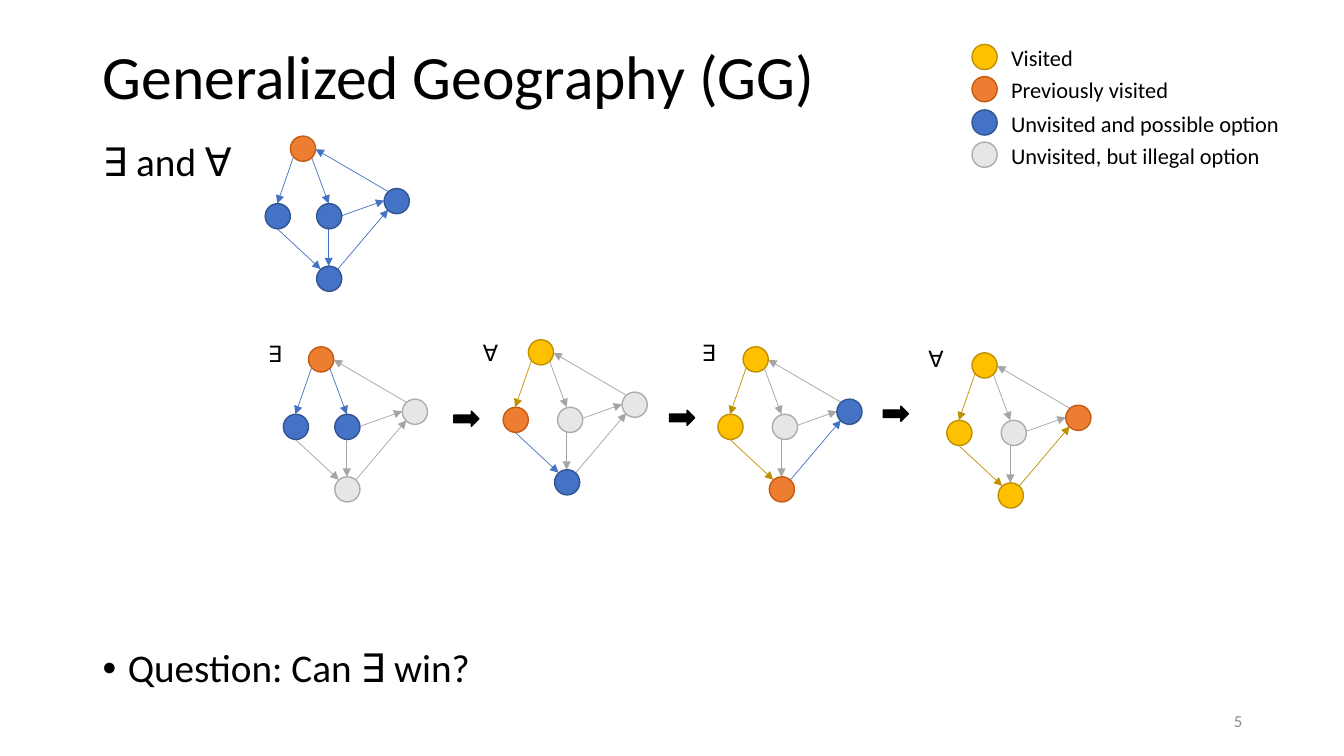
from lxml.etree import SubElement
from pptx import Presentation
from pptx.dml.color import RGBColor
from pptx.enum.shapes import MSO_CONNECTOR, MSO_SHAPE
from pptx.enum.text import MSO_ANCHOR, PP_ALIGN
from pptx.oxml.ns import qn
from pptx.util import Pt

PX = 9144  # 100 px to the inch
BLACK = RGBColor(0x00, 0x00, 0x00)
PAGE_GREY = RGBColor(0x8C, 0x8C, 0x8C)
BLUE = RGBColor(0x44, 0x72, 0xC4)
DARK_BLUE = RGBColor(0x32, 0x54, 0x91)
GOLD = RGBColor(0xFF, 0xC0, 0x00)
DARK_GOLD = RGBColor(0xBF, 0x90, 0x00)
ORANGE = RGBColor(0xED, 0x7D, 0x31)
DARK_ORANGE = RGBColor(0xC5, 0x5A, 0x11)
LIGHT_GREY = RGBColor(0xE7, 0xE6, 0xE6)
DARK_GREY = RGBColor(0xAF, 0xAB, 0xAB)
EDGE_GREY = RGBColor(0xA5, 0xA5, 0xA5)

NODE_SIZE = 25
VISITED = (GOLD, DARK_GOLD)
PREVIOUS = (ORANGE, DARK_ORANGE)
OPTION = (BLUE, DARK_BLUE)
ILLEGAL = (LIGHT_GREY, DARK_GREY)

presentation = Presentation()
presentation.slide_width = 1333 * PX
presentation.slide_height = 750 * PX
slide = presentation.slides.add_slide(presentation.slide_layouts[6])


def add_text(shapes, text, left, top, width, height, size, color=BLACK):
    box = shapes.add_textbox(left * PX, top * PX, width * PX, height * PX)
    box.text_frame.word_wrap = True
    box.text_frame.text = text
    paragraph = box.text_frame.paragraphs[0]
    font = paragraph.runs[0].font
    font.name = "Calibri"
    font.size = Pt(size)
    font.color.rgb = color
    return box.text_frame, paragraph


def add_preset(shapes, preset, left, top, width, height, fill, line):
    shape = shapes.add_shape(preset, left * PX, top * PX, width * PX, height * PX)
    shape.shadow.inherit = False
    shape.fill.solid()
    shape.fill.fore_color.rgb = fill
    shape.line.color.rgb = line
    shape.line.width = Pt(1)


# Title, body and slide number
title_frame, title = add_text(slide.shapes, "Generalized Geography (GG)", 92, 40, 850, 78, 44)
title_frame.vertical_anchor = MSO_ANCHOR.MIDDLE
_, players = add_text(slide.shapes, "∃ and ∀", 92, 137, 160, 55, 28)
_, question = add_text(slide.shapes, "Question: Can ∃ win?", 92, 639, 1150, 55, 28)
for paragraph in (title, players, question):
    paragraph.line_spacing = 0.9
properties = question._p.get_or_add_pPr()
properties.set("marL", str(25 * PX))
properties.set("indent", str(-25 * PX))
SubElement(properties, qn("a:buFont")).set("typeface", "Arial")
SubElement(properties, qn("a:buChar")).set("char", "•")

number_frame, number = add_text(slide.shapes, "5", 942, 695, 300, 40, 12, PAGE_GREY)
number_frame.vertical_anchor = MSO_ANCHOR.MIDDLE
number.alignment = PP_ALIGN.RIGHT

# Legend
legend = [
    (VISITED, "Visited"),
    (PREVIOUS, "Previously visited"),
    (OPTION, "Unvisited and possible option"),
    (ILLEGAL, "Unvisited, but illegal option"),
]
legend_group = slide.shapes.add_group_shape()
for row, (state, label) in enumerate(legend):
    top = 44 + row * 65 // 2
    add_preset(legend_group.shapes, MSO_SHAPE.OVAL, 964, top, NODE_SIZE, NODE_SIZE, *state)
    add_text(legend_group.shapes, label, 993, top - 5, 310, 37, 16)

# Arrows from one move to the next
for left, top in [(450, 408), (664, 407), (876, 403)]:
    add_preset(slide.shapes, MSO_SHAPE.RIGHT_ARROW, left, top, 25, 15, BLACK, BLACK)

# Edges, measured from the corner of the top node
EDGES = [
    (3, 21, -13, 67),  # top to left
    (21, 21, 38, 67),  # top to middle
    (38, 92, 38, 129),  # middle to bottom
    (-13, 92, 30, 132),  # left to bottom
    (47, 132, 97, 73),  # bottom to right
    (51, 79, 93, 64),  # middle to right
    (97, 55, 25, 13),  # right to top
]

# Corner of the top node, offset of the middle node, player and its place,
# states of the top, left, middle, bottom and right nodes, edges not in grey
graphs = [
    (288, 135, 26, None, (PREVIOUS, OPTION, OPTION, OPTION, OPTION),
     dict.fromkeys(range(7), BLUE)),
    (306, 344, 26, ("∃", 256, 333), (PREVIOUS, OPTION, OPTION, ILLEGAL, ILLEGAL),
     {0: BLUE, 1: BLUE}),
    (524, 337, 29, ("∀", 469, 332), (VISITED, PREVIOUS, ILLEGAL, OPTION, ILLEGAL),
     {0: DARK_GOLD, 3: BLUE}),
    (737, 344, 29, ("∃", 686, 332), (VISITED, VISITED, ILLEGAL, PREVIOUS, OPTION),
     {0: DARK_GOLD, 3: DARK_GOLD, 4: BLUE}),
    (964, 350, 29, ("∀", 911, 337), (VISITED, VISITED, ILLEGAL, VISITED, PREVIOUS),
     {0: DARK_GOLD, 3: DARK_GOLD, 4: DARK_GOLD}),
]
for left, top, middle, player, states, edge_colors in graphs:
    shapes = slide.shapes.add_group_shape().shapes
    for index, (x1, y1, x2, y2) in enumerate(EDGES):
        edge = shapes.add_connector(
            MSO_CONNECTOR.STRAIGHT,
            (left + x1) * PX, (top + y1) * PX, (left + x2) * PX, (top + y2) * PX,
        )
        edge.line.color.rgb = edge_colors.get(index, EDGE_GREY)
        edge.line.width = Pt(0.5)
        SubElement(edge.line._get_or_add_ln(), qn("a:tailEnd")).set("type", "triangle")
        SubElement(edge._element.spPr, qn("a:effectLst"))
    nodes = [(0, 0), (-25, 67), (middle, 67), (26, 129), (93, 52)]
    for (x, y), state in zip(nodes, states):
        add_preset(shapes, MSO_SHAPE.OVAL, left + x, top + y, NODE_SIZE, NODE_SIZE, *state)
    if player:
        symbol, player_left, player_top = player
        add_text(shapes, symbol, player_left, player_top, 34, 37, 16)

presentation.save("out.pptx")
